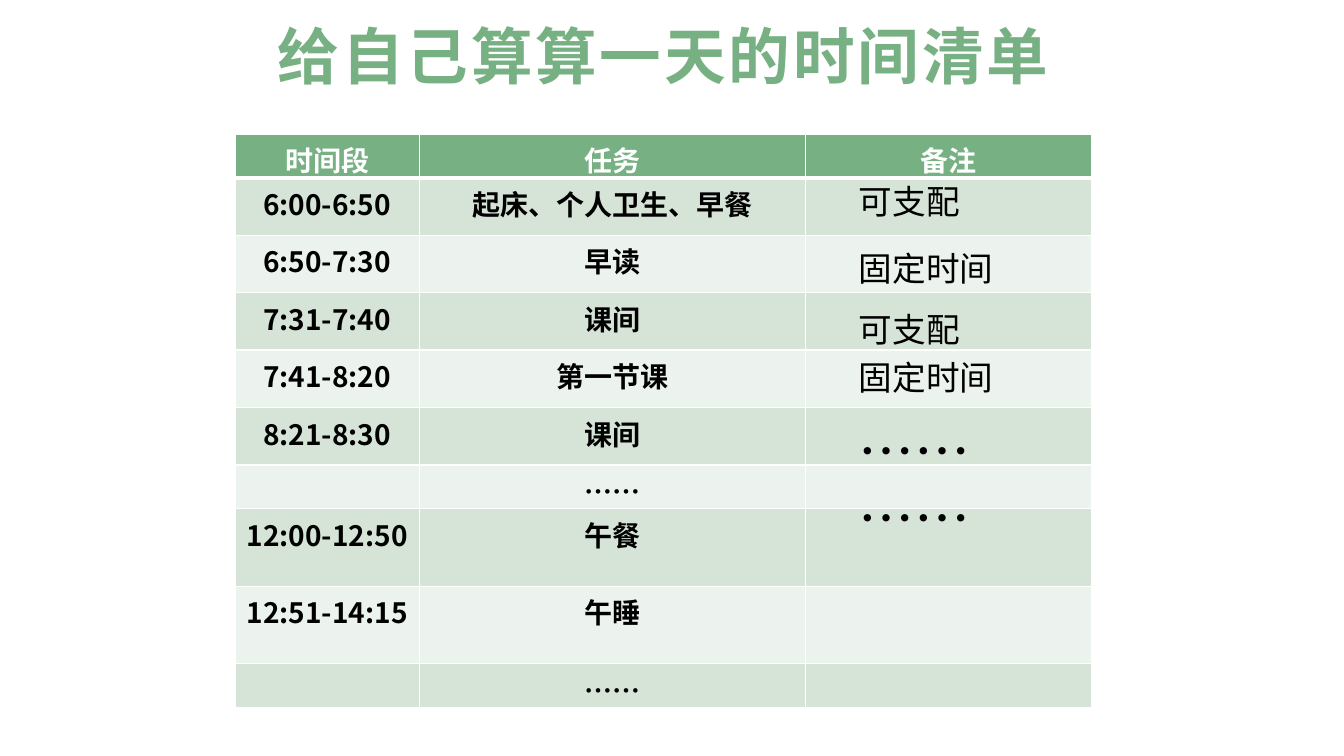
from lxml import etree
from pptx import Presentation
from pptx import util as u
from pptx.dml.color import RGBColor
from pptx.enum import text
from pptx.oxml import ns

PX = 9144
FONT = "Noto Sans CJK SC"
COLORS = {"green": "77B082", "band": "D6E4D8", "pale": "ECF2ED",
          "white": "FFFFFF", "black": "000000"}
COLUMNS = (183, 383, 284)
SCHEDULE = (
    (43, "时间段", "任务", "备注"),
    (57, "6:00-6:50", "起床、个人卫生、早餐", ""),
    (57, "6:50-7:30", "早读", ""),
    (57, "7:31-7:40", "课间", ""),
    (57, "7:41-8:20", "第一节课", ""),
    (57, "8:21-8:30", "课间", ""),
    (43, "", "……", ""),
    (77, "12:00-12:50", "午餐", ""),
    (77, "12:51-14:15", "午睡", ""),
    (43, "", "……", ""),
)
NOTES = ((175, 120, "可支配"), (241, 153, "固定时间"),
         (302, 120, "可支配"), (349, 153, "固定时间"))


def px(*lengths):
    """Turn pixel lengths into EMU."""
    return [u.Emu(n * PX) for n in lengths]


def rgb(name):
    """Look up a named colour."""
    return RGBColor.from_string(COLORS[name])


def set_attrs(obj, values):
    """Set every attribute named in a dict."""
    for name, value in values.items():
        setattr(obj, name, value)


def add_run(p, words, size, color, bold=False, spacing=0):
    """Add a styled run to a paragraph."""
    r = p.add_run()
    r.text = words
    set_attrs(r.font, {"size": u.Pt(size), "bold": bold, "name": FONT})
    r.font.color.rgb = rgb(color)
    rPr = r.font._element
    etree.SubElement(rPr, ns.qn("a:ea"), typeface=FONT)
    if spacing:
        rPr.set("spc", str(spacing * 100))


def add_text(s, box, lines, run, frame=None, para=None):
    """Add a text box with one paragraph per line."""
    tf = s.shapes.add_textbox(*px(*box)).text_frame
    set_attrs(tf, {"word_wrap": True, **(frame or {})})
    for i, line in enumerate(lines):
        p = tf.paragraphs[0] if i == 0 else tf.add_paragraph()
        set_attrs(p, para or {})
        add_run(p, line, **run)


def set_borders(cell, widths):
    """Draw white cell borders of the given point widths."""
    tcPr = cell._tc.get_or_add_tcPr()
    for side, width in widths.items():
        ln = etree.SubElement(tcPr, ns.qn("a:ln" + side), w=str(u.Pt(width)))
        fill = etree.SubElement(ln, ns.qn("a:solidFill"))
        etree.SubElement(fill, ns.qn("a:srgbClr"), val=COLORS["white"])


def fill_cell(cell, row, words):
    """Style one schedule cell by its row and write its words."""
    set_borders(cell, {"L": 1, "R": 1, "T": 3 if row == 1 else 1,
                       "B": 3 if row == 0 else 1})
    cell.fill.solid()
    band = "band" if row % 2 else "pale"
    cell.fill.fore_color.rgb = rgb(band if row else "green")
    if words:
        p = cell.text_frame.paragraphs[0]
        p.alignment = text.PP_ALIGN.CENTER
        add_run(p, words, 20, "black" if row else "white", bold=True)


def add_schedule(s, left, top):
    """Add the table of time slots and tasks."""
    height = sum(row[0] for row in SCHEDULE)
    table = s.shapes.add_table(len(SCHEDULE), len(COLUMNS),
                               *px(left, top, sum(COLUMNS), height)).table
    for column, width in zip(table.columns, px(*COLUMNS)):
        column.width = width
    for i, (row_height, *cells) in enumerate(SCHEDULE):
        table.rows[i].height = px(row_height)[0]
        for j, words in enumerate(cells):
            fill_cell(table.cell(i, j), i, words)


def main():
    """Build the daily time list slide."""
    prs = Presentation()
    set_attrs(prs, dict(zip(("slide_width", "slide_height"), px(1333, 750))))
    s = prs.slides.add_slide(prs.slide_layouts[6])
    add_text(s, (233, -8, 850, 125), ["给自己算算一天的时间清单"],
             {"size": 44, "color": "green", "bold": True, "spacing": 2},
             {"vertical_anchor": text.MSO_ANCHOR.MIDDLE},
             {"alignment": text.PP_ALIGN.CENTER})
    add_schedule(s, 233, 133)
    grow = {"auto_size": text.MSO_AUTO_SIZE.SHAPE_TO_FIT_TEXT}
    for top, width, words in NOTES:
        add_text(s, (842, top, width, 50), [words],
                 {"size": 24, "color": "black"}, {**grow, "word_wrap": False})
    add_text(s, (842, 408, 183, 145), ["……"] * 2,
             {"size": 40, "color": "black"}, grow, {"line_spacing": u.Pt(48)})
    prs.save("out.pptx")


if __name__ == "__main__":
    main()
